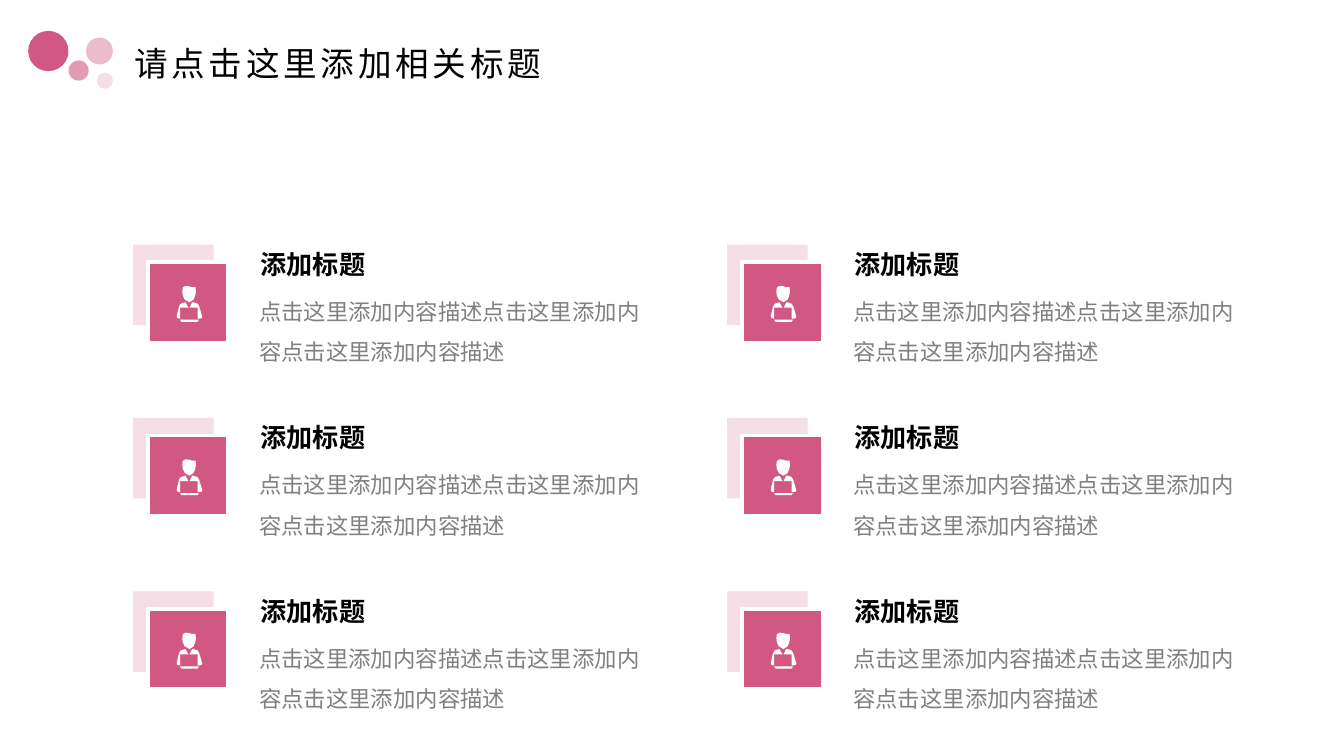
from itertools import product

from pptx import Presentation
from pptx.dml.color import RGBColor
from pptx.enum.shapes import MSO_SHAPE
from pptx.enum.text import MSO_ANCHOR, PP_ALIGN
from pptx.oxml.ns import qn
from pptx.util import Inches, Pt

COLORS = {
    "rose": "D05883",
    "mid": "E39BB5",
    "soft": "ECBCCD",
    "pale": "F6DEE6",
    "white": "FFFFFF",
    "black": "000000",
    "gray": "808080",
}
TITLE = "请点击这里添加相关标题"
HEAD = "添加标题"
BODY = "点击这里添加内容描述点击这里添加内容点击这里添加内容描述"

DOTS = [
    (0.21, 0.23, 0.3, "rose"),
    (0.51, 0.45, 0.15, "mid"),
    (0.64, 0.28, 0.2, "soft"),
    (0.72, 0.54, 0.12, "pale"),
]

# Outlines of the person icon, in thousandths of an inch
ICON = [
    # head
    [(50, 90), (47, 60), (50, 30), (70, 18), (95, 20), (120, 28), (145, 27),
     (148, 60), (143, 90), (130, 120), (100, 140), (65, 120)],
    # base
    [(30, 270), (170, 270), (160, 285), (40, 285)],
    # right arm
    [(172, 170), (190, 230), (195, 250), (188, 260), (160, 262), (160, 180),
     (100, 180), (120, 140), (130, 140), (160, 150)],
    # left arm
    [(30, 262), (10, 258), (5, 245), (8, 230), (22, 170), (35, 150),
     (70, 140), (92, 180), (30, 180)],
]
LEFT, TOP = 0.99, 1.82
STEP_X, STEP_Y = 4.42, 1.29


def color(key):
    return RGBColor.from_string(COLORS[key])


def paint(shape, fill, line=None):
    shape.shadow.inherit = False
    shape.fill.solid()
    shape.fill.fore_color.rgb = color(fill)
    if line:
        shape.line.color.rgb = color(line)
        shape.line.width = Pt(2)
    else:
        shape.line.fill.background()


def add_shape(slide, kind, x, y, size, fill, line=None):
    box = [Inches(v) for v in (x, y, size, size)]
    paint(slide.shapes.add_shape(kind, *box), fill, line)


def add_text(slide, box, text, size, hue, font="Calibri", bold=False,
             anchor=MSO_ANCHOR.TOP):
    """Add a wrapped text box and return its paragraph."""
    frame = slide.shapes.add_textbox(*[Inches(v) for v in box]).text_frame
    frame.word_wrap = True
    frame.vertical_anchor = anchor
    para = frame.paragraphs[0]
    para.text = text
    para.alignment = PP_ALIGN.LEFT
    run = para.runs[0]
    run.font.name = font
    run.font.size = Pt(size)
    run.font.bold = bold
    run.font.color.rgb = color(hue)
    east = run.font._element.makeelement(qn("a:ea"), {"typeface": font})
    run.font._element.find(qn("a:latin")).addnext(east)
    return para


def add_icon(slide, x, y):
    start = ICON[0][0]
    pen = slide.shapes.build_freeform(*start, scale=Inches(1) / 1000)
    for part in ICON:
        if part[0] != start:
            pen.move_to(*part[0])
        pen.add_line_segments(part[1:], close=True)
    paint(pen.convert_to_shape(Inches(x), Inches(y)), "white")


def add_title(slide):
    para = add_text(slide, (0.9, 0.19, 8.62, 0.59), TITLE, 18, "black",
                    font="Noto Sans CJK SC", anchor=MSO_ANCHOR.MIDDLE)
    para.line_spacing = 0.9
    para.runs[0].font._element.set("spc", "200")


def add_item(slide, x, y):
    add_shape(slide, MSO_SHAPE.RECTANGLE, x, y, 0.6, "pale")
    add_shape(slide, MSO_SHAPE.RECTANGLE, x + 0.11, y + 0.13, 0.6, "rose",
              "white")
    add_text(slide, (x + 0.85, y - 0.07, 1.55, 0.43), HEAD, 14, "black",
             bold=True, anchor=MSO_ANCHOR.MIDDLE)
    para = add_text(slide, (x + 0.84, y + 0.25, 3.06, 0.63), BODY, 12, "gray")
    para.line_spacing = 1.5
    para.space_after = Pt(6)
    add_icon(slide, x + 0.32, y + 0.29)


def main():
    deck = Presentation()
    deck.slide_width = Inches(10)
    deck.slide_height = deck.slide_width * 9 // 16
    slide = deck.slides.add_slide(deck.slide_layouts[6])
    for x, y, size, fill in DOTS:
        add_shape(slide, MSO_SHAPE.OVAL, x, y, size, fill)
    add_title(slide)
    for row, col in product(range(3), range(2)):
        add_item(slide, LEFT + col * STEP_X, TOP + row * STEP_Y)
    deck.save("out.pptx")


if __name__ == "__main__":
    main()
